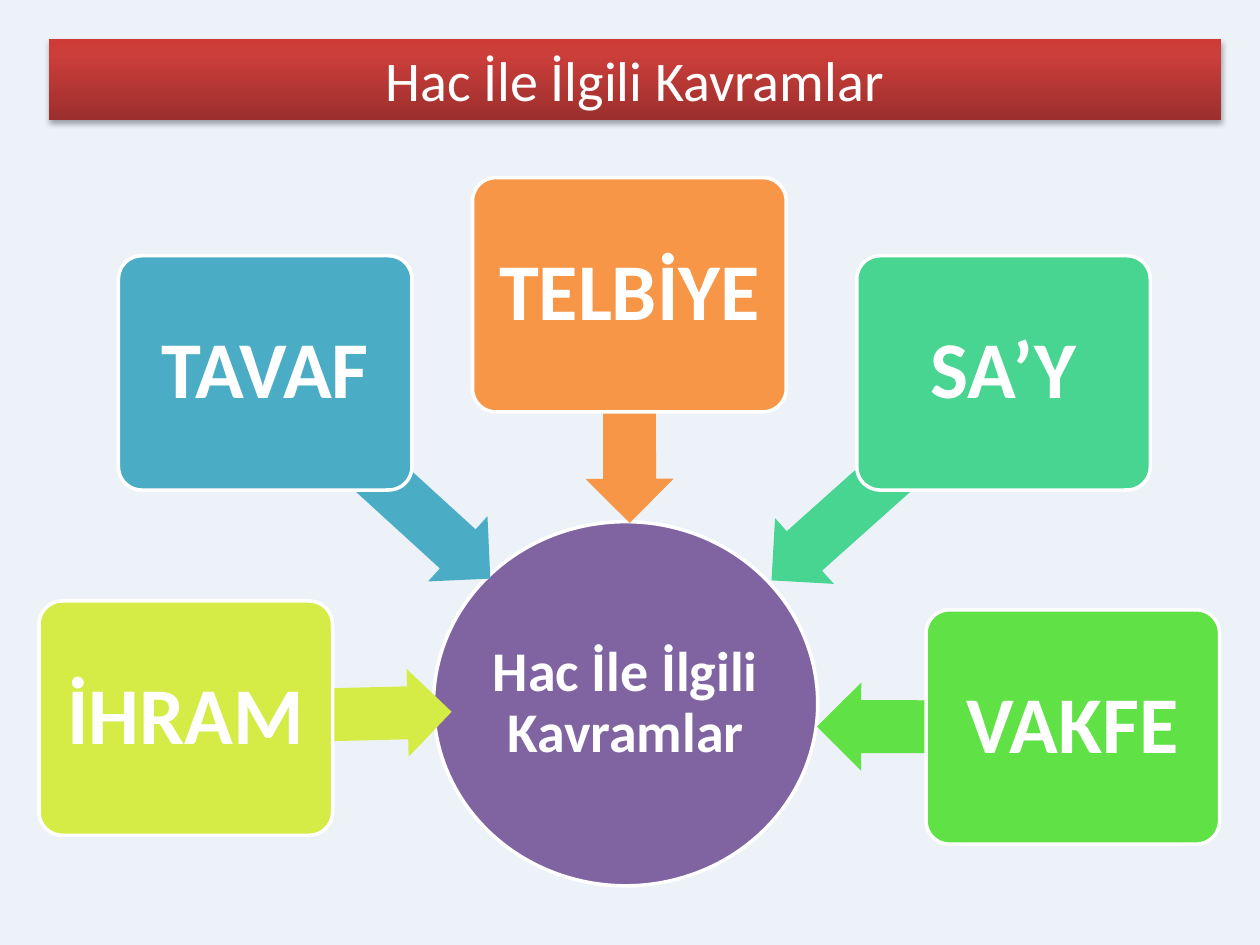
from copy import deepcopy
from math import cos, radians, sin

from lxml import etree
from pptx import Presentation
from pptx.dml.color import RGBColor
from pptx.enum.shapes import MSO_SHAPE as Shape
from pptx.enum.text import MSO_ANCHOR as Anchor, PP_ALIGN as Align
from pptx.oxml import parse_xml
from pptx.util import Inches, Pt

WHITE = RGBColor(0xFF, 0xFF, 0xFF)
BACKGROUND = RGBColor(0xED, 0xF2, 0xF8)
PURPLE = RGBColor(0x80, 0x64, 0xA2)
BLUE = RGBColor(0x4B, 0xAC, 0xC6)
MINT = RGBColor(0x48, 0xD4, 0x91)
GREEN = RGBColor(0x60, 0xE1, 0x46)
LIME = RGBColor(0xD5, 0xEC, 0x46)
ORANGE = RGBColor(0xF7, 0x96, 0x46)
TITLE_STOPS = [
    (0, RGBColor(0x9C, 0x2F, 0x2D)),
    (0.8, RGBColor(0xCB, 0x3E, 0x3A)),
    (1, RGBColor(0xCE, 0x3B, 0x37)),
]
DRAWING_NS = "http://schemas.openxmlformats.org/drawingml/2006/main"


def add_filled(kind, left, top, width, height, color):
    shape = slide.shapes.add_shape(
        kind, Inches(left), Inches(top), Inches(width), Inches(height))
    shape.shadow.inherit = False
    shape.fill.solid()
    shape.fill.fore_color.rgb = color
    shape.line.fill.background()
    return shape


def write_label(shape, text, size, inset, bold=True):
    frame = shape.text_frame
    frame.word_wrap = True
    frame.vertical_anchor = Anchor.MIDDLE
    frame.margin_left = frame.margin_right = Inches(inset)
    frame.margin_top = frame.margin_bottom = Inches(inset)
    frame.text = text
    paragraph = frame.paragraphs[0]
    paragraph.alignment = Align.CENTER
    paragraph.line_spacing = 0.9
    paragraph.font.name = "Calibri"
    paragraph.font.size = Pt(size)
    paragraph.font.bold = bold
    paragraph.font.color.rgb = WHITE


presentation = Presentation()
presentation.slide_width, presentation.slide_height = Inches(10), Inches(7.5)
slide = presentation.slides.add_slide(presentation.slide_layouts[5])
slide.background.fill.solid()
slide.background.fill.fore_color.rgb = BACKGROUND

# Title bar with a gradient and a soft shadow
title = slide.shapes.title
title.left, title.top = Inches(0.39), Inches(0.31)
title.width, title.height = Inches(9.3), Inches(0.64)
write_label(title, "Hac İle İlgili Kavramlar", 32, 0.05, bold=False)
title.text_frame.paragraphs[0].line_spacing = 1
title.fill.gradient()
title.fill.gradient_angle = 90
stop_list = title.fill._fill._gradFill.gsLst
stop_list.append(deepcopy(stop_list[-1]))
for stop, (position, color) in zip(title.fill.gradient_stops, TITLE_STOPS):
    stop.position = position
    stop.color.rgb = color
title.line.fill.background()
title.shadow.inherit = False
effects = title._element.spPr.find(etree.QName(DRAWING_NS, "effectLst"))
effects.append(parse_xml(
    f'<a:outerShdw xmlns:a="{DRAWING_NS}" blurRad="{Pt(3.1)}" dist="{Pt(1.8)}" '
    'dir="5400000" rotWithShape="0"><a:srgbClr val="000000">'
    '<a:alpha val="35000"/></a:srgbClr></a:outerShdw>'))

# Central circle
hub = add_filled(Shape.OVAL, 3.44, 4.14, 3.05, 2.89, PURPLE)
hub.line.color.rgb = WHITE
hub.line.width = Pt(2)
write_label(hub, "Hac İle İlgili Kavramlar", 32, 0)

# Concepts: text, colour, box left, top and width, arrow length and rotation
CONCEPTS = [
    ("TAVAF", BLUE, 0.94, 2.03, 2.33, 2.42, 222.4),
    ("SA’Y", MINT, 6.8, 2.03, 2.33, 2.47, 318.2),
    ("VAKFE", GREEN, 7.35, 4.84, 2.33, 2.03, 0.1),
    ("İHRAM", LIME, 0.31, 4.77, 2.33, 2.11, 178.6),
    ("TELBİYE", ORANGE, 3.75, 1.41, 2.49, 1.81, 269.9),
]
BOX_HEIGHT = 1.86
ARROW_HEIGHT = 0.7

for text, color, left, top, width, length, rotation in CONCEPTS:
    # The arrow's tail sits at the centre of its box
    center_x = left + width / 2 - cos(radians(rotation)) * length / 2
    center_y = top + BOX_HEIGHT / 2 - sin(radians(rotation)) * length / 2
    arrow = add_filled(Shape.LEFT_ARROW, center_x - length / 2,
                       center_y - ARROW_HEIGHT / 2, length, ARROW_HEIGHT, color)
    arrow.adjustments[0] = 0.6
    arrow.adjustments[1] = 0.5
    arrow.rotation = rotation

    box = add_filled(Shape.ROUNDED_RECTANGLE, left, top, width, BOX_HEIGHT, color)
    box.adjustments[0] = 0.1
    box.line.color.rgb = WHITE
    box.line.width = Pt(2)
    write_label(box, text, 46, 0.1)

presentation.save("out.pptx")
